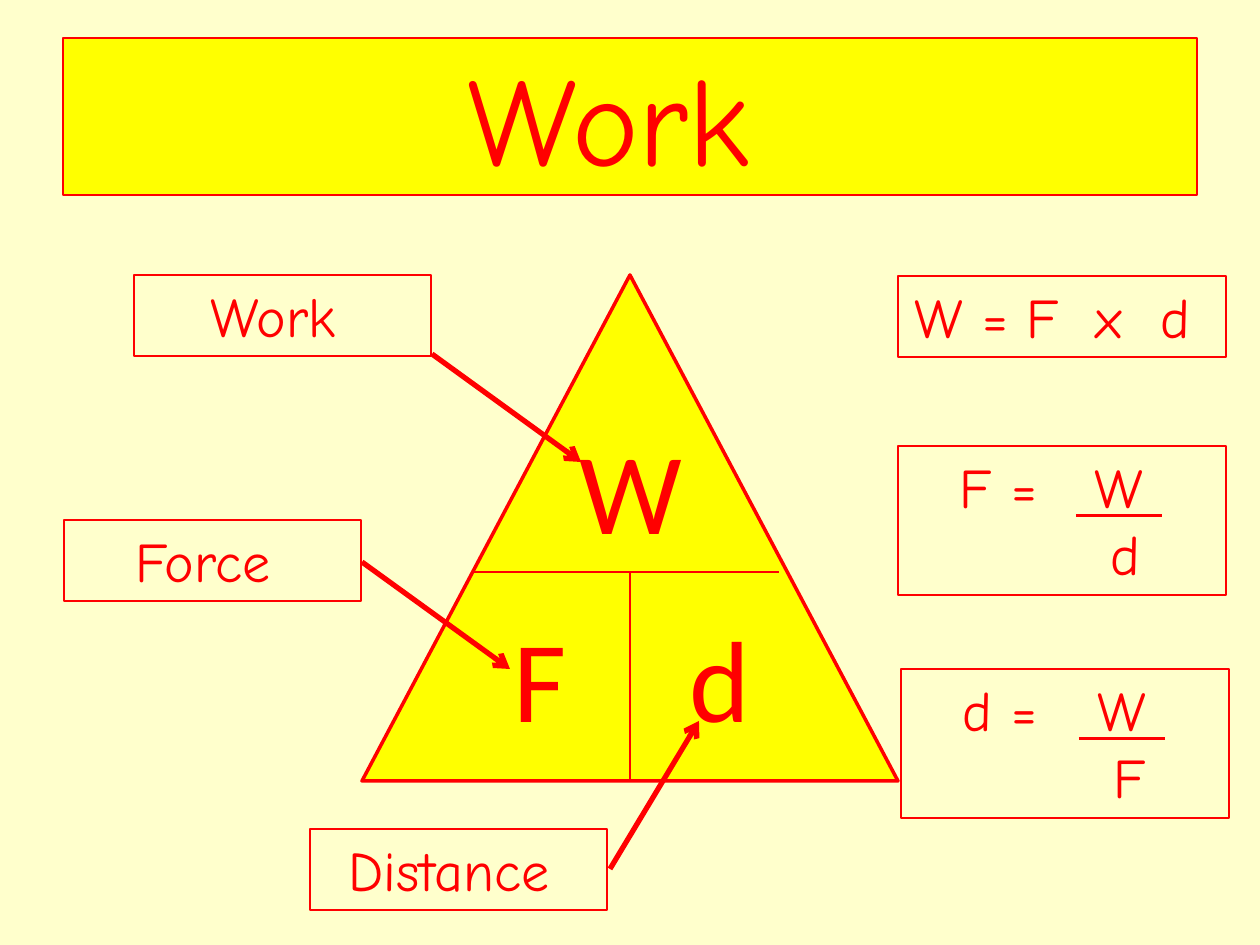
"""Build the slide on work, with its formula triangle and three equations."""
from lxml import etree
from pptx import Presentation
from pptx import util as u
from pptx.dml.color import RGBColor
from pptx.enum import shapes, text
from pptx.oxml.ns import qn

PX = u.Inches(1) / 126
RED, YELLOW, CREAM = "FF0000", "FFFF00", "FFFFCC"
HAND, PLAIN = "Comic Neue", "Calibri"

TITLE = ("Work ", (63, 38, 1134, 157))
TRIANGLE = (362, 275, 536, 506)
DIVIDERS = [(471, 572, 779, 572), (630, 572, 630, 780)]
LETTERS = [("W", 561, 413), ("d", 650, 601), ("F", 471, 601)]
LETTER_SIZE = (139, 152)
LABELS = [("Work ", 134, 275), ("Force ", 64, 520), ("Distance ", 310, 829)]
LABEL_SIZE = (297, 81)
ARROWS = [(432, 354, 581, 462), (362, 562, 510, 669), (610, 869, 699, 721)]
PRODUCT = ("W = F\tx\td", (898, 276, 328, 81), 17, (180, 246))
QUOTIENTS = [("F", "W", "d", 898, 446), ("d", "W", "F", 901, 669)]
QUOTIENT_SIZE, QUOTIENT_INSET = (328, 149), 62
FRACTION_TAB, DIVISOR_TAB = 116, 151


def px(value):
    return u.Emu(round(value * PX))


def color(value):
    return RGBColor.from_string(value)


def outline(part, width):
    part.line.color.rgb = color(RED)
    part.line.width = u.Pt(width)


def add_panel(slide, box, kind=shapes.MSO_SHAPE.RECTANGLE, fill=None, width=0.75):
    panel = slide.shapes.add_shape(kind, *map(px, box))
    panel.shadow.inherit = False
    if fill:
        panel.fill.solid()
        panel.fill.fore_color.rgb = color(fill)
    else:
        panel.fill.background()
    outline(panel, width)
    return panel


def write(panel, lines, size, font=HAND, anchor="TOP", align="CENTER", inset=None):
    """Fill a panel with lines, each a list of (words, underlined) and its tab stops."""
    frame = panel.text_frame
    formats = {"word_wrap": True, "vertical_anchor": text.MSO_ANCHOR[anchor]}
    if inset is not None:
        formats["margin_left"] = px(inset)
    for name, value in formats.items():
        setattr(frame, name, value)
    for index, (runs, stops) in enumerate(lines):
        line = frame.add_paragraph() if index else frame.paragraphs[0]
        line.alignment = text.PP_ALIGN[align]
        if stops:
            tabs = etree.SubElement(line._p.get_or_add_pPr(), qn("a:tabLst"))
            for stop in stops:
                etree.SubElement(tabs, qn("a:tab"), pos=str(px(stop)), algn="l")
        for words, underlined in runs:
            run = line.add_run()
            run.text = words
            for name, value in {"size": u.Pt(size), "name": font,
                                "underline": underlined}.items():
                setattr(run.font, name, value)
            run.font.color.rgb = color(RED)


def add_line(slide, ends, width, arrow=False):
    line = slide.shapes.add_connector(shapes.MSO_CONNECTOR.STRAIGHT, *map(px, ends))
    outline(line, width)
    if arrow:
        etree.SubElement(line.line._get_or_add_ln(), qn("a:tailEnd"), type="arrow")
    etree.SubElement(line._element.spPr, qn("a:effectLst"))


def single(words, stops=()):
    return [([(words, None)], stops)]


def main():
    deck = Presentation()
    deck.slide_width, deck.slide_height = u.Inches(10), u.Inches(7.5)
    slide = deck.slides.add_slide(deck.slide_layouts[6])
    slide.background.fill.solid()
    slide.background.fill.fore_color.rgb = color(CREAM)

    heading, box = TITLE
    write(add_panel(slide, box, fill=YELLOW), single(heading), 72, anchor="MIDDLE")

    add_panel(slide, TRIANGLE, shapes.MSO_SHAPE.ISOSCELES_TRIANGLE, YELLOW, 2)
    for ends in DIVIDERS:
        add_line(slide, ends, 0.75)
    for letter, x, y in LETTERS:
        symbol = slide.shapes.add_textbox(*map(px, (x, y, *LETTER_SIZE)))
        write(symbol, single(letter), 66, PLAIN)

    for label, x, y in LABELS:
        write(add_panel(slide, (x, y, *LABEL_SIZE)), single(label), 32)
    for ends in ARROWS:
        add_line(slide, ends, 3, arrow=True)

    product, box, inset, stops = PRODUCT
    write(add_panel(slide, box), single(product, stops), 32, align="LEFT", inset=inset)
    for result, dividend, divisor, x, y in QUOTIENTS:
        fraction = [
            ([(f"{result} =\t", None), (f" {dividend} ", True)], [FRACTION_TAB]),
            ([(f"\t{divisor}", None)], [DIVISOR_TAB]),
        ]
        write(add_panel(slide, (x, y, *QUOTIENT_SIZE)), fraction, 32,
              align="LEFT", inset=QUOTIENT_INSET)

    deck.save("out.pptx")


if __name__ == "__main__":
    main()
